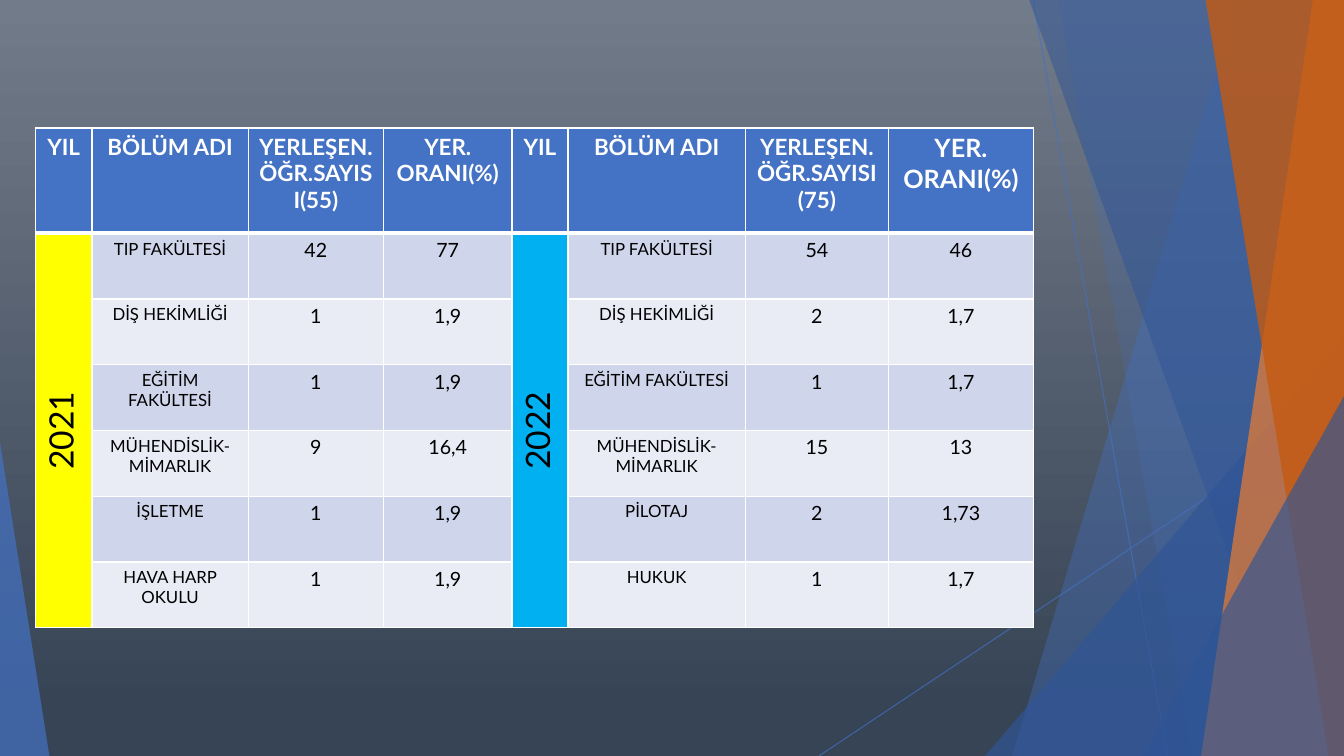
from lxml.etree import SubElement
from pptx import Presentation
from pptx.dml.color import RGBColor as Color
from pptx.enum.shapes import MSO_CONNECTOR as Connector, MSO_SHAPE as Shape
from pptx.enum.text import PP_ALIGN as Align
from pptx.oxml.ns import qn
from pptx.util import Pt

COLORS = {
    "blue": "4472C4", "navy": "2F5597", "orange": "ED7D31", "rust": "C55A11",
    "sky": "727B89", "dusk": "374455", "white": "FFFFFF", "black": "000000",
    "band_dark": "CFD5EA", "band_light": "E9EBF5",
    "yellow": "FFFF00", "cyan": "00B0F0",
}
WIDTH, HEIGHT = 960, 540

COLUMN_WIDTHS = [40.4, 111.6, 96.7, 91.7, 40.1, 126.7, 102.2, 103.6]
HEADER_HEIGHT, ROW_HEIGHT = 75.3, 46.95
HEADERS = ["YIL", "BÖLÜM ADI", "YERLEŞEN. ÖĞR.SAYISI(55)", "YER. ORANI(%)",
           "YIL", "BÖLÜM ADI", "YERLEŞEN. ÖĞR.SAYISI (75)", "YER. ORANI(%)"]
FACULTIES = [
    ["TIP FAKÜLTESİ", "42", "77", "TIP FAKÜLTESİ", "54", "46"],
    ["DİŞ HEKİMLİĞİ", "1", "1,9", "DİŞ HEKİMLİĞİ", "2", "1,7"],
    ["EĞİTİM FAKÜLTESİ", "1", "1,9", "EĞİTİM FAKÜLTESİ", "1", "1,7"],
    ["MÜHENDİSLİK-MİMARLIK", "9", "16,4", "MÜHENDİSLİK-MİMARLIK", "15", "13"],
    ["İŞLETME", "1", "1,9", "PİLOTAJ", "2", "1,73"],
    ["HAVA HARP OKULU", "1", "1,9", "HUKUK", "1", "1,7"],
]
YEARS = {0: ("2021", "yellow"), 4: ("2022", "cyan")}


class SlideBuilder:
    font = "Lato"

    def __init__(self, slide):
        self.slide = slide

    def color(self, name):
        return Color.from_string(COLORS[name])

    def set_opacity(self, fill, name, opacity):
        """Give a shape's or a line's fill a see-through colour."""
        fill.solid()
        fill.fore_color.rgb = self.color(name)

    def add_alpha(self, element, opacity):
        color = next(element.iter(qn("a:srgbClr")))
        SubElement(color, qn("a:alpha"), val=str(opacity * 1000))

    def background(self, top, bottom, end):
        fill = self.slide.background.fill
        fill.gradient()
        fill.gradient_angle = 270
        for stop, name, position in zip(fill.gradient_stops, (top, bottom), (0, end)):
            stop.color.rgb = self.color(name)
            stop.position = position

    def line(self, start, end, name, opacity):
        line = self.slide.shapes.add_connector(
            Connector.STRAIGHT, *(Pt(value) for value in (*start, *end)))
        line.line.width = Pt(0.75)
        line.line.color.rgb = self.color(name)
        properties = line._element.spPr
        self.add_alpha(properties, opacity)
        SubElement(properties, qn("a:effectLst"))

    def paint(self, shape, name, opacity):
        shape.shadow.inherit = False
        shape.fill.solid()
        shape.fill.fore_color.rgb = self.color(name)
        self.add_alpha(shape._element.spPr, opacity)
        shape.line.fill.background()

    def band(self, top_left, bottom_left, name, opacity):
        """Fill from a slanted left edge to the right side of the slide."""
        outline = self.slide.shapes.build_freeform(Pt(top_left), Pt(-0.6))
        corners = [(WIDTH, -0.6), (WIDTH, HEIGHT), (bottom_left, HEIGHT)]
        outline.add_line_segments([(Pt(x), Pt(y)) for x, y in corners], close=True)
        self.paint(outline.convert_to_shape(), name, opacity)

    def triangle(self, left, top, width, apex, name, opacity):
        """Stand a right triangle on the bottom of the slide."""
        shape = self.slide.shapes.add_shape(
            Shape.ISOSCELES_TRIANGLE, Pt(left), Pt(top), Pt(width), Pt(HEIGHT - top))
        shape.adjustments[0] = apex
        self.paint(shape, name, opacity)

    def table(self, left, top, widths, heights):
        table = self.slide.shapes.add_table(
            len(heights), len(widths), Pt(left), Pt(top),
            Pt(sum(widths)), Pt(sum(heights))).table
        for column, width in zip(table.columns, widths):
            column.width = Pt(width)
        for row, height in zip(table.rows, heights):
            row.height = Pt(height)
        return table

    def borders(self, cell, top, bottom):
        properties = cell._tc.get_or_add_tcPr()
        for side, width in {"L": 1, "R": 1, "T": top, "B": bottom}.items():
            border = SubElement(properties, qn(f"a:ln{side}"), w=str(Pt(width)))
            fill = SubElement(border, qn("a:solidFill"))
            SubElement(fill, qn("a:srgbClr"), val=COLORS["white"])

    def cell(self, cell, text, fill, size, ink="black", bold=False):
        cell.fill.solid()
        cell.fill.fore_color.rgb = self.color(fill)
        para = cell.text_frame.paragraphs[0]
        para.alignment = Align.CENTER
        span = para.add_run()
        span.text = text
        style = {"name": self.font, "size": Pt(size), "bold": bold}
        for key, value in style.items():
            setattr(span.font, key, value)
        span.font.color.rgb = self.color(ink)


def main():
    deck = Presentation()
    deck.slide_width, deck.slide_height = Pt(WIDTH), Pt(HEIGHT)
    page = SlideBuilder(deck.slides.add_slide(deck.slide_layouts[6]))

    # Background and slanted facets
    page.background("sky", "dusk", 0.94)
    page.line((738, 0), (834, HEIGHT), "blue", 70)
    page.line((WIDTH, 290), (585, HEIGHT), "blue", 70)
    page.band(884, 723, "blue", 36)
    page.band(756, 852, "blue", 20)
    page.triangle(703.5, 240, 256.5, 1, "navy", 66)
    page.band(735, 929.5, "navy", 50)
    page.band(938, 858, "orange", 70)
    page.band(861, 949, "rust", 80)
    page.triangle(816.5, 283, 143.5, 1, "navy", 66)
    page.triangle(0, 316, 35.3, 0, "blue", 70)

    # Table grid
    heights = [HEADER_HEIGHT] + [ROW_HEIGHT] * len(FACULTIES)
    table = page.table(25.3, 91.4, COLUMN_WIDTHS, heights)
    for row in range(len(heights)):
        for column in range(len(COLUMN_WIDTHS)):
            page.borders(table.cell(row, column),
                         3 if row == 1 else 1, 3 if row == 0 else 1)

    # Header row
    last = len(HEADERS) - 1
    for column, text in enumerate(HEADERS):
        page.cell(table.cell(0, column), text, "blue",
                  18 if column == last else 16, "white", True)

    # Year cells, read upwards
    for column, (year, fill) in YEARS.items():
        cell = table.cell(1, column)
        cell.merge(table.cell(len(FACULTIES), column))
        page.cell(cell, year, fill, 24)
        cell._tc.get_or_add_tcPr().set("vert", "vert270")

    # Faculty rows
    columns = [column for column in range(len(HEADERS)) if column not in YEARS]
    for row, values in enumerate(FACULTIES, start=1):
        fill = "band_dark" if row % 2 else "band_light"
        for column, text in zip(columns, values):
            size = 12 if column - 1 in YEARS else 14
            page.cell(table.cell(row, column), text, fill, size)

    deck.save("out.pptx")


if __name__ == "__main__":
    main()
